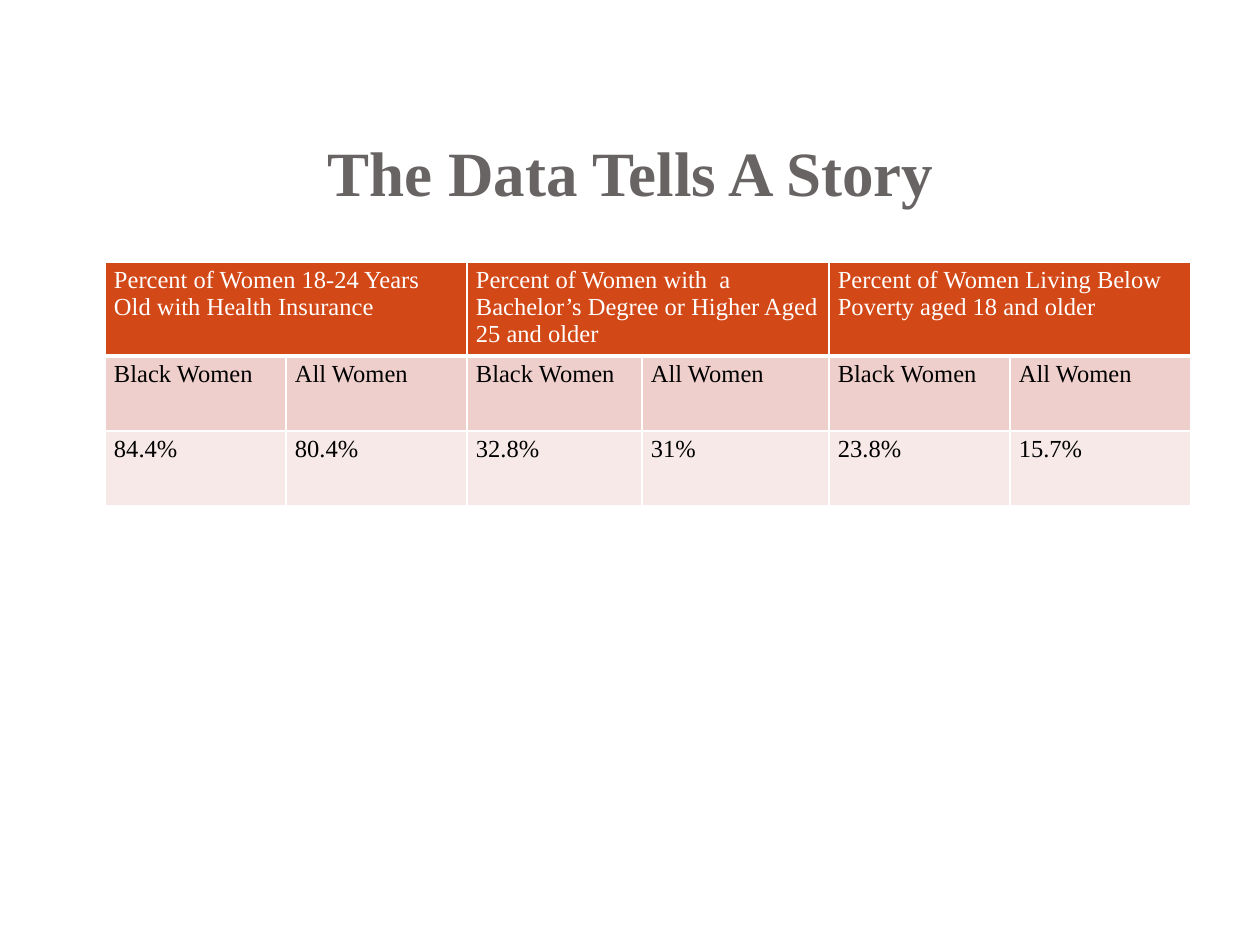
import dataclasses

import lxml.etree
import pptx
import pptx.dml.color
import pptx.enum.text
import pptx.oxml.ns
import pptx.util


@dataclasses.dataclass(frozen=True)
class Theme:
    font: str = "Times New Roman"
    title_size: int = 36
    table_size: int = 14
    title: str = "696464"
    header: str = "D34817"
    group: str = "EFCFCC"
    value: str = "F7E9E8"
    light: str = "FFFFFF"
    dark: str = "000000"


THEME = Theme()
PIXELS_PER_INCH = 126
COLUMNS = (181, 181, 175, 187, 181, 181)
ROWS = (94, 75, 75)
MEASURES = (
    ("Percent of Women 18-24 Years Old with Health Insurance", "84.4%", "80.4%"),
    ("Percent of Women with  a Bachelor’s Degree or Higher Aged 25 and older", "32.8%", "31%"),
    ("Percent of Women Living Below Poverty aged 18 and older", "23.8%", "15.7%"),
)
GROUPS = ("Black Women", "All Women")


def px(length):
    return pptx.util.Emu(round(length * 914400 / PIXELS_PER_INCH))


def rgb(color):
    return pptx.dml.color.RGBColor.from_string(color)


def add_span(para, text, size, color, bold=False):
    span = para.add_run()
    span.text = text
    span.font.name = THEME.font
    span.font.size = pptx.util.Pt(size)
    span.font.bold = bold
    span.font.color.rgb = rgb(color)


def set_border(cell, side, width):
    properties = cell._tc.get_or_add_tcPr()
    line = lxml.etree.SubElement(
        properties, pptx.oxml.ns.qn(f"a:{side}"), w=str(pptx.util.Pt(width))
    )
    fill = lxml.etree.SubElement(line, pptx.oxml.ns.qn("a:solidFill"))
    lxml.etree.SubElement(fill, pptx.oxml.ns.qn("a:srgbClr"), val=THEME.light)


def format_cell(cell, fill, top, bottom):
    for side, width in (("lnL", 1), ("lnR", 1), ("lnT", top), ("lnB", bottom)):
        set_border(cell, side, width)
    cell.fill.solid()
    cell.fill.fore_color.rgb = rgb(fill)
    cell.margin_left = cell.margin_right = px(9)
    cell.margin_top = cell.margin_bottom = px(5)


def write_cell(cell, text, color):
    add_span(cell.text_frame.paragraphs[0], text, THEME.table_size, color)


def place_title(page, left, top, width, height):
    title = page.shapes.title
    title.left, title.top = px(left), px(top)
    title.width, title.height = px(width), px(height)
    box = title.text_frame
    box.word_wrap = True
    box.auto_size = pptx.enum.text.MSO_AUTO_SIZE.NONE
    box.vertical_anchor = pptx.enum.text.MSO_ANCHOR.BOTTOM
    box.margin_left = box.margin_right = px(13)
    box.margin_top = px(0)
    box.margin_bottom = px(85)
    para = box.paragraphs[0]
    para.alignment = pptx.enum.text.PP_ALIGN.CENTER
    add_span(para, "The Data Tells A Story ", THEME.title_size, THEME.title, bold=True)


def place_table(page, left, top):
    frame = page.shapes.add_table(
        len(ROWS), len(COLUMNS), px(left), px(top), px(sum(COLUMNS)), px(sum(ROWS))
    )
    table = frame.table
    for column, width in zip(table.columns, COLUMNS):
        column.width = px(width)
    for row, height in zip(table.rows, ROWS):
        row.height = px(height)
    row_styles = ((THEME.header, 1, 3), (THEME.group, 3, 1), (THEME.value, 1, 1))
    for row, style in zip(table.rows, row_styles):
        for cell in row.cells:
            format_cell(cell, *style)
    for index, (heading, *values) in enumerate(MEASURES):
        first = index * len(GROUPS)
        header = table.cell(0, first)
        header.merge(table.cell(0, first + len(GROUPS) - 1))
        write_cell(header, heading, THEME.light)
        for column, (group, value) in enumerate(zip(GROUPS, values), first):
            write_cell(table.cell(1, column), group, THEME.dark)
            write_cell(table.cell(2, column), value, THEME.dark)


def main():
    deck = pptx.Presentation()
    deck.slide_width, deck.slide_height = px(1260), px(945)
    page = deck.slides.add_slide(deck.slide_layouts.get_by_name("Title Only"))
    page.background.fill.solid()
    page.background.fill.fore_color.rgb = rgb(THEME.light)
    place_title(page, 103, 136, 1071, 158)
    place_table(page, 105, 262)
    deck.save("out.pptx")


if __name__ == "__main__":
    main()
